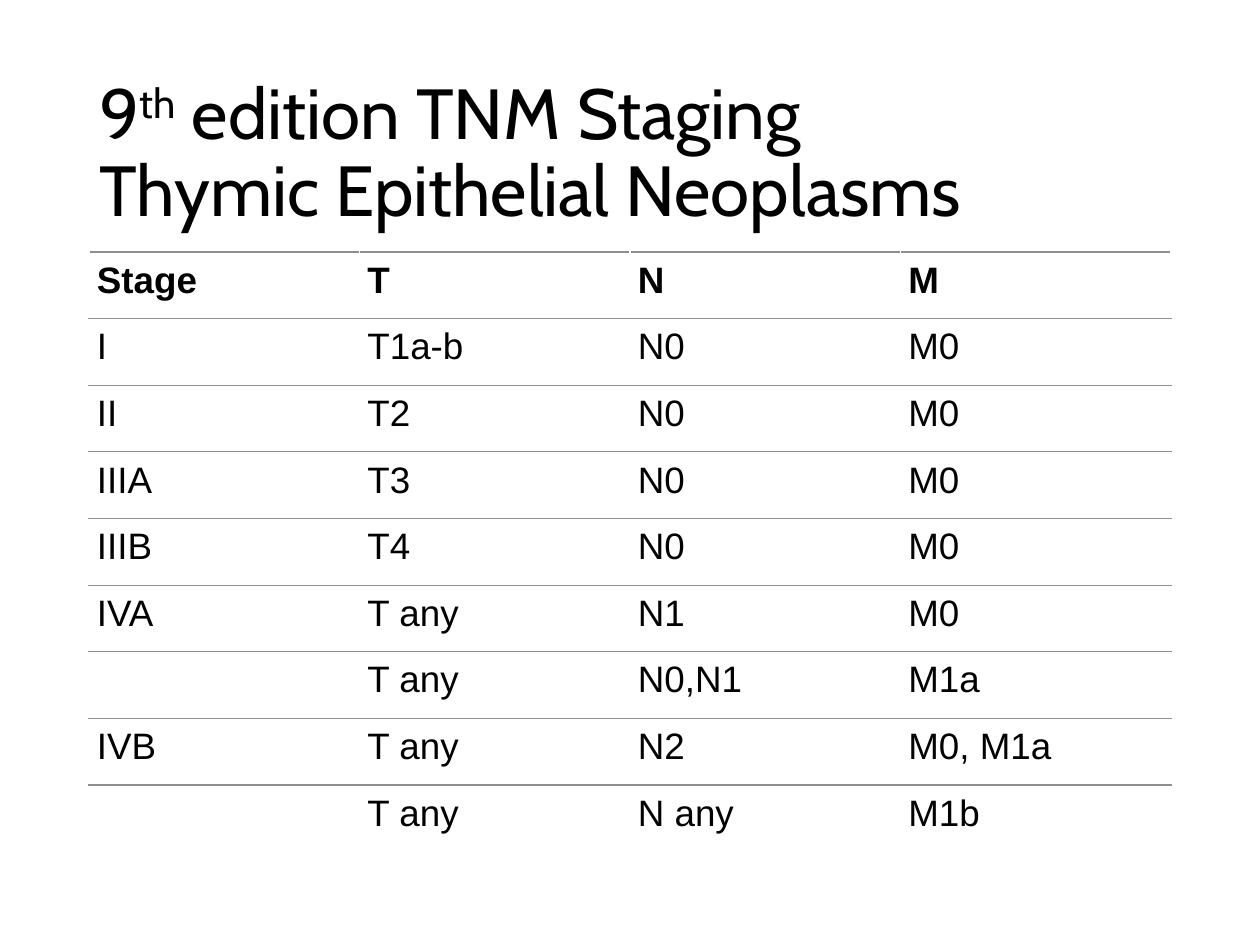
from dataclasses import dataclass

from lxml import etree
from pptx import Presentation, util as u
from pptx.dml.color import RGBColor
from pptx.enum import text
from pptx.oxml.ns import qn


@dataclass(frozen=True)
class Theme:
    ink: str = "000000"
    rule: str = "8E8E8E"
    title_font: str = "Cabin"
    body_font: str = "Arial"
    title_size: float = 40.5
    body_size: float = 21
    rule_width: float = 0.75


def px(n):
    return u.Emu(n * 914400 // 126)


class Deck:
    def __init__(self, theme, width, height):
        self.theme = theme
        self.prs = Presentation()
        self.prs.slide_width, self.prs.slide_height = px(width), px(height)
        self.s = self.prs.slides.add_slide(self.prs.slide_layouts[6])

    def style(self, p, name, size, bold=False):
        p.font.name, p.font.size, p.font.bold = name, u.Pt(size), bold
        p.font.color.rgb = RGBColor.from_string(self.theme.ink)

    def title(self, box, base, superscript, rest, second_line):
        tf = self.s.shapes.add_textbox(*map(px, box)).text_frame
        tf.word_wrap = True
        tf.vertical_anchor = text.MSO_ANCHOR.MIDDLE
        p = tf.paragraphs[0]
        p.line_spacing = 0.9
        self.style(p, self.theme.title_font, self.theme.title_size)
        p.add_run().text = base
        r = p.add_run()
        r.text = superscript
        r.font._element.set("baseline", "30000")
        p.add_run().text = rest
        p.add_line_break()
        p.add_run().text = second_line

    def border(self, cell, side):
        ln = etree.SubElement(cell._tc.get_or_add_tcPr(), qn(f"a:ln{side}"),
                              w=str(u.Pt(self.theme.rule_width)))
        fill = etree.SubElement(ln, qn("a:solidFill"))
        etree.SubElement(fill, qn("a:srgbClr"), val=self.theme.rule)

    def table(self, box, rows, inset):
        table = self.s.shapes.add_table(len(rows), len(rows[0]), *map(px, box)).table
        table.first_row = table.horz_banding = False
        for i, row in enumerate(rows):
            for j, value in enumerate(row):
                cell = table.cell(i, j)
                cell.margin_left = cell.margin_right = px(inset)
                cell.margin_top = cell.margin_bottom = px(inset)
                self.border(cell, "T")
                if i < len(rows) - 1:
                    self.border(cell, "B")
                cell.fill.background()
                p = cell.text_frame.paragraphs[0]
                self.style(p, self.theme.body_font, self.theme.body_size, bold=i == 0)
                if value:
                    p.add_run().text = value


STAGES = [
    ("Stage", "T", "N", "M"),
    ("I", "T1a-b", "N0", "M0"),
    ("II", "T2", "N0", "M0"),
    ("IIIA", "T3", "N0", "M0"),
    ("IIIB", "T4", "N0", "M0"),
    ("IVA", "T any", "N1", "M0"),
    ("", "T any", "N0,N1", "M1a"),
    ("IVB", "T any", "N2", "M0, M1a"),
    ("", "T any", "N any", "M1b"),
]


def main():
    deck = Deck(Theme(), 1260, 945)
    deck.title((87, 77, 1086, 156), "9", "th", " edition TNM Staging",
               "Thymic Epithelial Neoplasms")
    deck.table((89, 252, 1082, 600), STAGES, inset=8)
    deck.prs.save("out.pptx")


if __name__ == "__main__":
    main()
